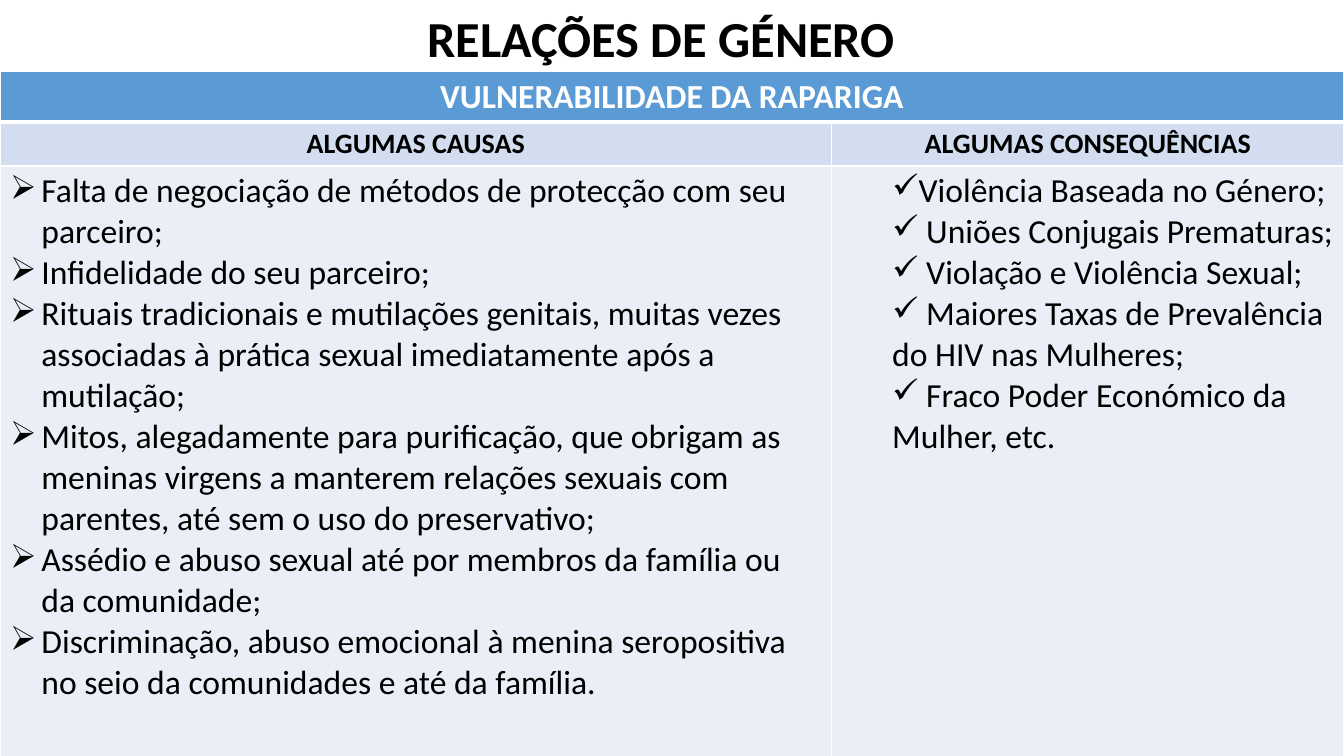
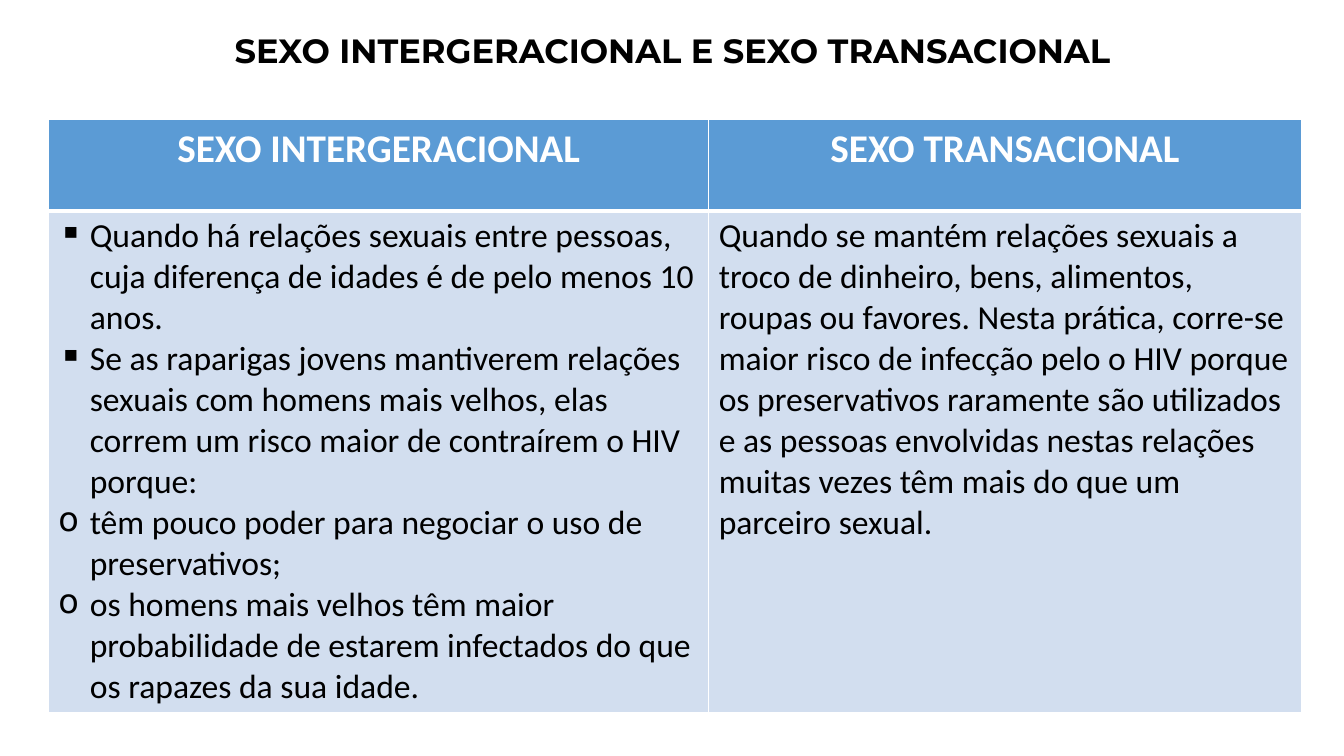
from lxml import etree
from pptx import Presentation
from pptx.dml.color import RGBColor
from pptx.enum.text import MSO_ANCHOR, PP_ALIGN
from pptx.oxml.ns import qn
from pptx.util import Cm, Pt

CENTER, LEFT = PP_ALIGN.CENTER, PP_ALIGN.LEFT
MIDDLE = MSO_ANCHOR.MIDDLE
COLORS = {
    "text": "000000",
    "white": "FFFFFF",
    "header": "5B9BD5",
    "band": "D2DEEF",
    "pale": "EAEFF7",
}
BODY_FONT = "Calibri"
HANGING = (0, Cm(0.79), Cm(-0.79))  # level, left margin, first-line indent
INDENTED = (1, Cm(1.27), 0)


def format_paragraph(paragraph, size, color="text", bold=False, align=LEFT, font=BODY_FONT):
    paragraph.alignment = align
    for run in paragraph.runs:
        run.font.name = font
        run.font.size = Pt(size)
        run.font.bold = bold
        run.font.color.rgb = RGBColor.from_string(COLORS[color])


def fill_cell(cell, fill, top=1, bottom=1):
    cell.fill.solid()
    cell.fill.fore_color.rgb = RGBColor.from_string(COLORS[fill])
    properties = cell._tc.get_or_add_tcPr()
    borders = (("a:lnL", 1), ("a:lnR", 1), ("a:lnT", top), ("a:lnB", bottom))
    for position, (tag, width) in enumerate(borders):
        line = etree.Element(qn(tag), w=str(Pt(width)))
        solid = etree.SubElement(line, qn("a:solidFill"))
        etree.SubElement(solid, qn("a:srgbClr"), val=COLORS["white"])
        properties.insert(position, line)


# Each body cell is a list of (bullet, indent, text)
causes = [("➢", HANGING, text) for text in (
    "Falta de negociação de métodos de protecção com seu parceiro;",
    "Inﬁdelidade do seu parceiro;",
    "Rituais tradicionais e mutilações genitais, muitas vezes associadas à "
    "prática sexual imediatamente após a mutilação;",
    "Mitos, alegadamente para purificação, que obrigam as meninas virgens a "
    "manterem relações sexuais com parentes, até sem o uso do preservativo;",
    "Assédio e abuso sexual até por membros da família ou da comunidade;",
    "Discriminação, abuso emocional à menina seropositiva no seio da "
    "comunidades e até da família.",
)]
consequences = [("✓", INDENTED, text) for text in (
    "Violência Baseada no Género;",
    " Uniões Conjugais Prematuras;",
    " Violação e Violência Sexual;",
    " Maiores Taxas de Prevalência do HIV nas Mulheres;",
    " Fraco Poder Económico da Mulher, etc.",
)]
intergenerational = [
    ("▪", HANGING, "Quando há relações sexuais entre pessoas, cuja diferença de "
     "idades é de pelo menos 10 anos."),
    ("▪", HANGING, "Se as raparigas jovens mantiverem relações sexuais com homens "
     "mais velhos, elas correm um risco maior de contraírem o HIV porque:"),
    ("o", HANGING, "têm pouco poder para negociar o uso de preservativos;"),
    ("o", HANGING, "os homens mais velhos têm maior probabilidade de estarem "
     "infectados do que os rapazes da sua idade."),
]
transactional = [
    (None, None, "Quando se mantém relações sexuais a troco de dinheiro, bens, "
     "alimentos, roupas ou favores. Nesta prática, corre-se maior risco de infecção "
     "pelo o HIV porque os preservativos raramente são utilizados e as pessoas "
     "envolvidas nestas relações muitas vezes têm mais do que um parceiro sexual."),
]

# Heading rows: (texts, size, text colour, fill); a single text spans the row
pages = [
    {
        "title": ("RELAÇÕES DE GÉNERO", 36, BODY_FONT),
        "title_box": (2.06, 0, 29.21, 2.06),
        "origin": (0, 1.8),
        "columns": (20.96, 12.91),
        "rows": (1.28, 1.1, 15.11),
        "headings": [
            (["VULNERABILIDADE DA RAPARIGA"], 24, "white", "header"),
            (["ALGUMAS CAUSAS", "ALGUMAS CONSEQUÊNCIAS"], 20, "text", "band"),
        ],
        "body": (causes, consequences),
        "body_fill": "pale",
    },
    {
        "title": ("SEXO INTERGERACIONAL E SEXO TRANSACIONAL", 24, "Montserrat"),
        "title_box": (2.34, 0.23, 29.21, 2.18),
        "origin": (1.22, 3.02),
        "columns": (16.64, 14.93),
        "rows": (2.29, 12.65),
        "headings": [
            (["SEXO INTERGERACIONAL", "SEXO TRANSACIONAL"], 28, "white", "header"),
        ],
        "body": (intergenerational, transactional),
        "body_fill": "band",
    },
]

presentation = Presentation()
presentation.slide_width = Cm(33.87)
presentation.slide_height = Cm(19.05)
blank_layout = presentation.slide_layouts[6]

for page in pages:
    slide = presentation.slides.add_slide(blank_layout)

    # Title
    title, title_size, title_font = page["title"]
    text_frame = slide.shapes.add_textbox(*map(Cm, page["title_box"])).text_frame
    text_frame.word_wrap = True
    text_frame.vertical_anchor = MIDDLE
    text_frame.text = title
    paragraph = text_frame.paragraphs[0]
    paragraph.line_spacing = 0.9
    format_paragraph(paragraph, title_size, bold=True, align=CENTER, font=title_font)

    # Table grid
    columns, rows = page["columns"], page["rows"]
    table = slide.shapes.add_table(
        len(rows), len(columns), *map(Cm, page["origin"]),
        Cm(sum(columns)), Cm(sum(rows))).table
    table.horz_banding = False
    for column, width in zip(table.columns, columns):
        column.width = Cm(width)
    for row, height in zip(table.rows, rows):
        row.height = Cm(height)

    # Fills and borders, with a thick rule below the first row
    fills = [heading[3] for heading in page["headings"]] + [page["body_fill"]]
    for row_index, fill in enumerate(fills):
        for cell in table.rows[row_index].cells:
            fill_cell(cell, fill, top=3 if row_index == 1 else 1,
                      bottom=3 if row_index == 0 else 1)

    # Heading rows
    for row_index, (texts, size, color, _) in enumerate(page["headings"]):
        if len(texts) == 1:
            table.cell(row_index, 0).merge(table.cell(row_index, len(columns) - 1))
        for column_index, text in enumerate(texts):
            text_frame = table.cell(row_index, column_index).text_frame
            text_frame.text = text
            format_paragraph(text_frame.paragraphs[0], size, color, True, CENTER)

    # Body row
    for column_index, items in enumerate(page["body"]):
        text_frame = table.cell(len(rows) - 1, column_index).text_frame
        text_frame.text = "\n".join(text for _, _, text in items)
        for paragraph, (bullet, layout, _) in zip(text_frame.paragraphs, items):
            format_paragraph(paragraph, 24)
            if bullet:
                level, margin, indent = layout
                paragraph.level = level
                properties = paragraph._p.get_or_add_pPr()
                properties.set("marL", str(margin))
                properties.set("indent", str(indent))
                etree.SubElement(properties, qn("a:buChar"), char=bullet)

presentation.save("out.pptx")
